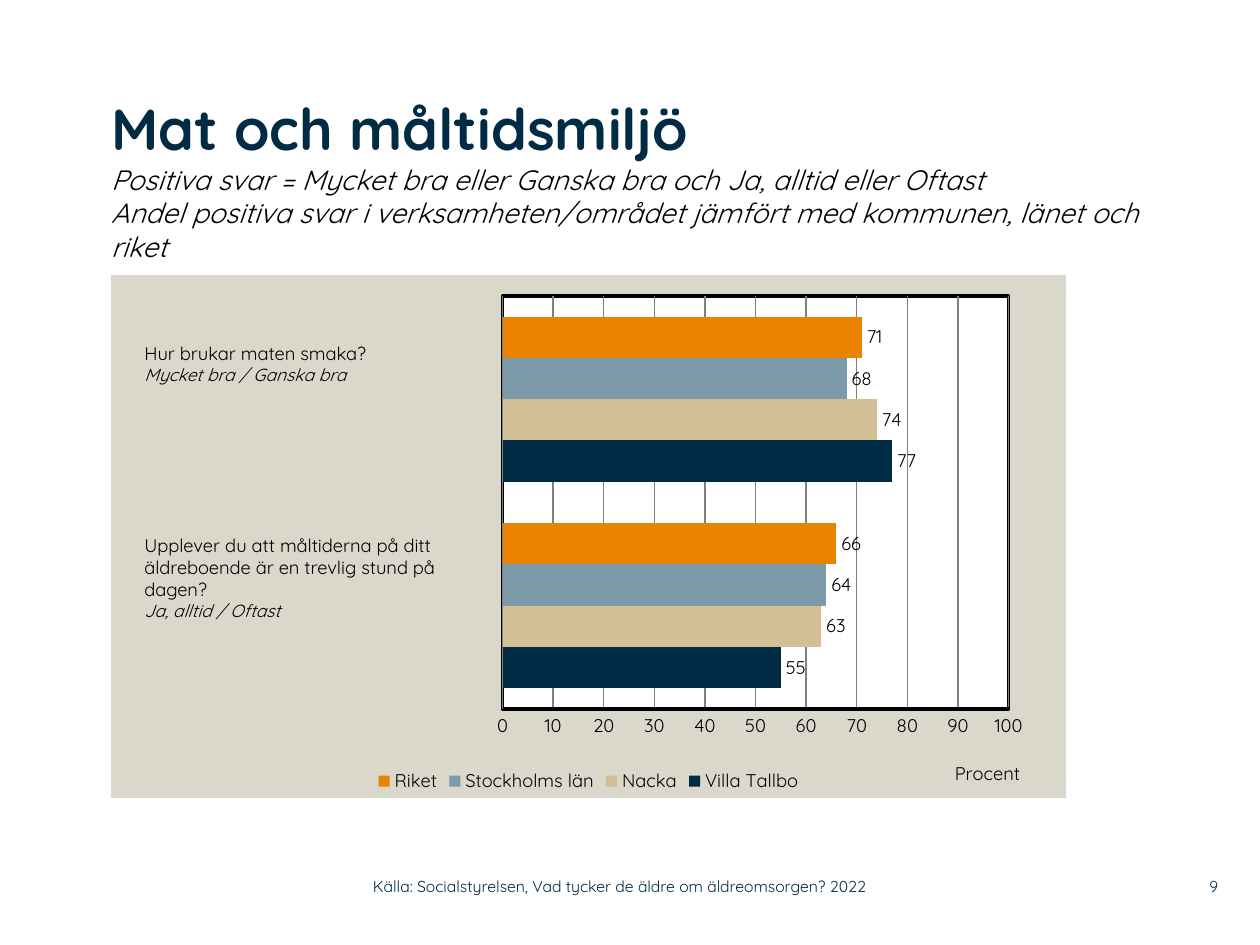
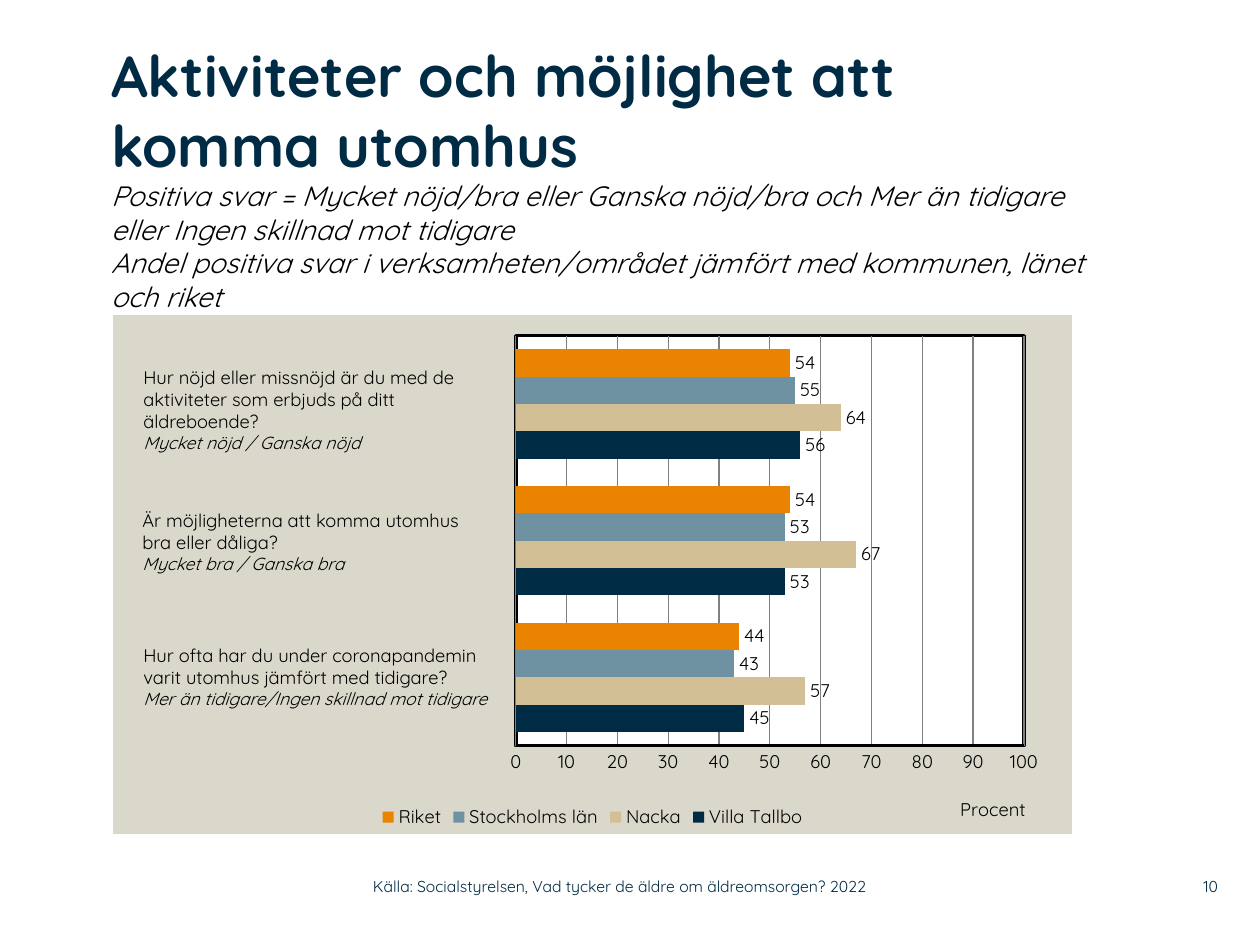
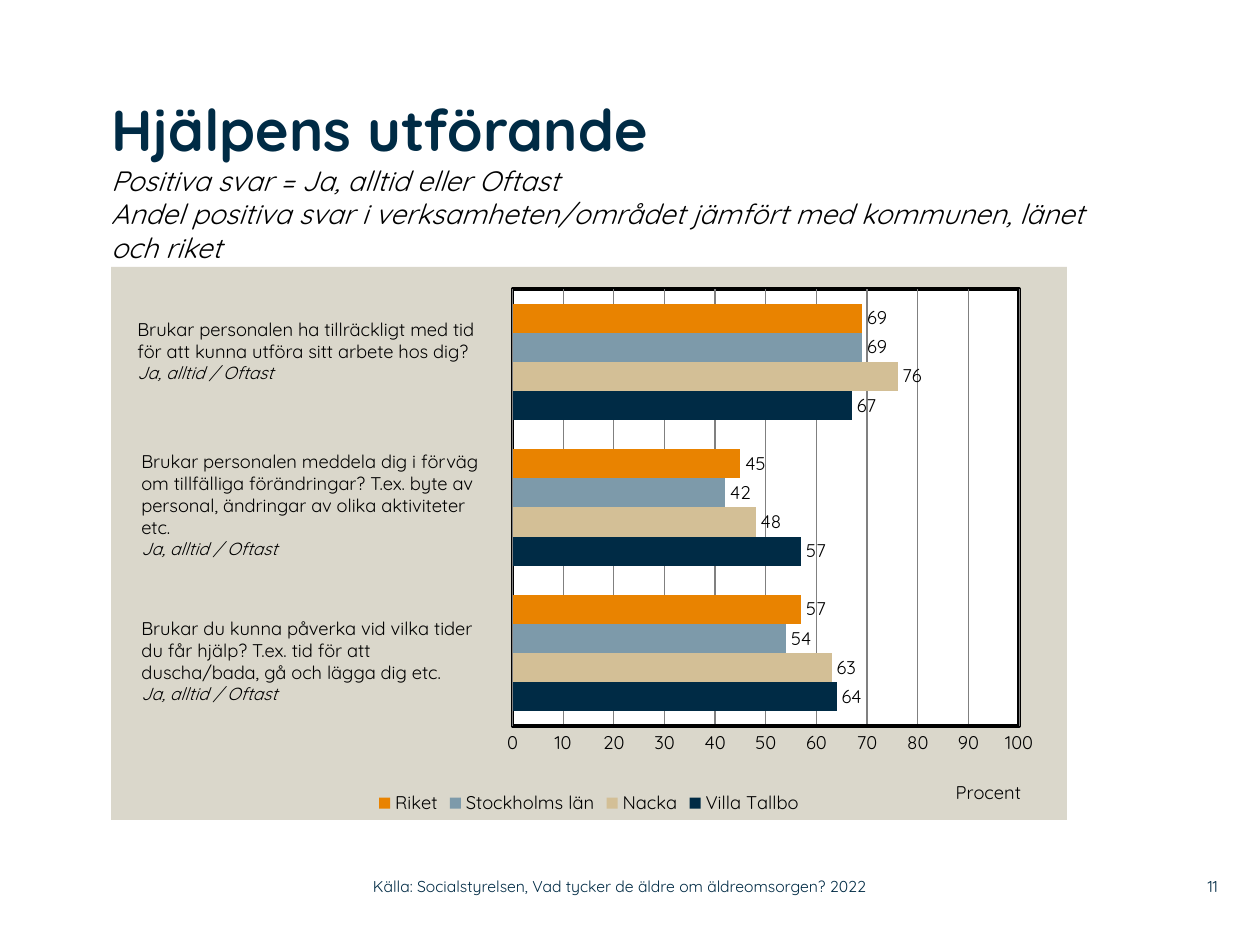
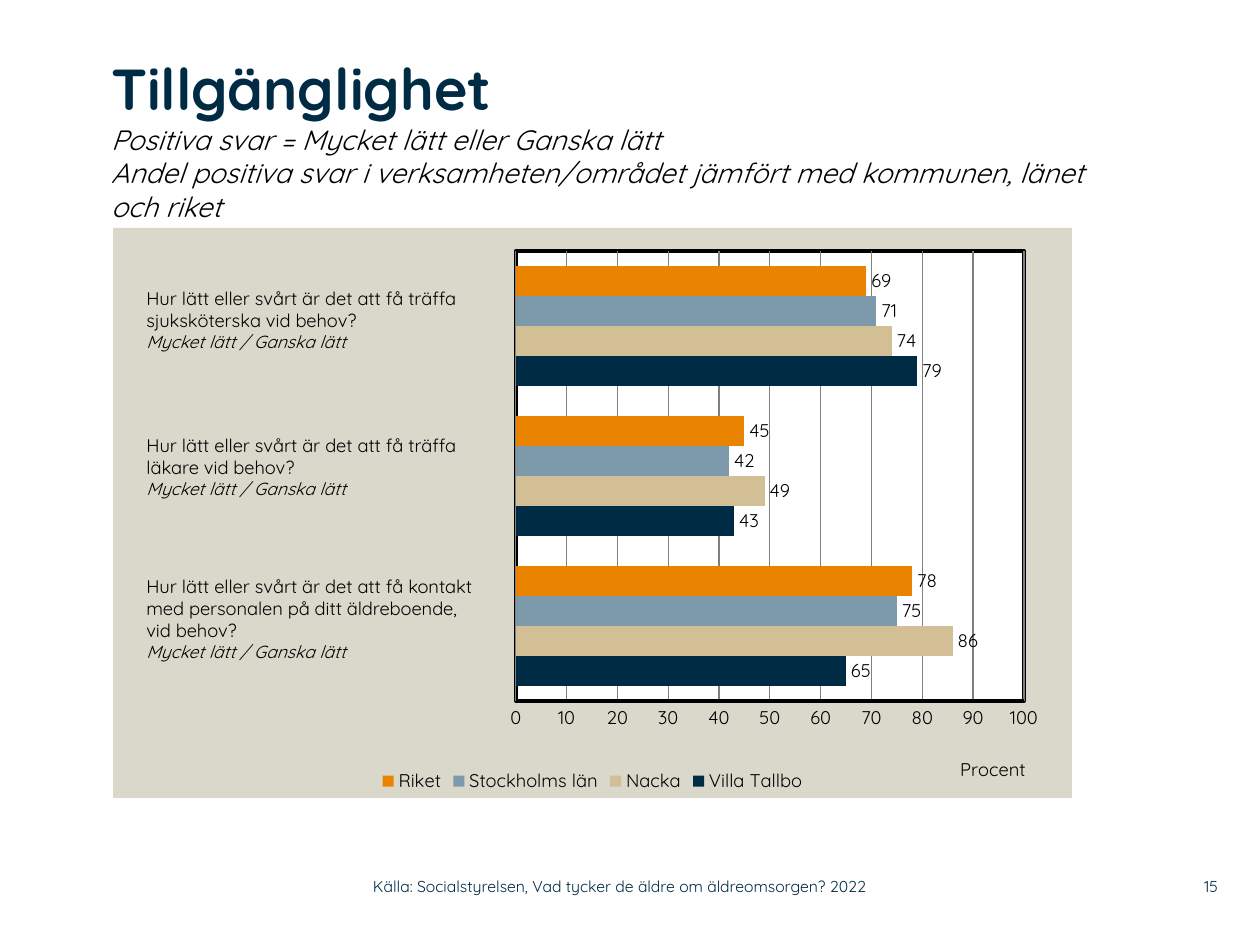
"""Build four slides with survey results from a home for elderly people."""
from lxml import etree
from pptx import Presentation
from pptx.chart.data import CategoryChartData
from pptx.dml.color import RGBColor
from pptx.enum.chart import XL_CHART_TYPE, XL_LABEL_POSITION, XL_LEGEND_POSITION, XL_TICK_MARK
from pptx.enum.text import MSO_ANCHOR, MSO_AUTO_SIZE, PP_ALIGN
from pptx.oxml import parse_xml
from pptx.oxml.ns import nsdecls, qn
from pptx.util import Emu, Pt

BARS = XL_CHART_TYPE.BAR_CLUSTERED
OUTSIDE_END = XL_LABEL_POSITION.OUTSIDE_END
BOTTOM = XL_LEGEND_POSITION.BOTTOM
NO_TICKS = XL_TICK_MARK.NONE
TOP, MIDDLE = MSO_ANCHOR.TOP, MSO_ANCHOR.MIDDLE
LEFT, RIGHT = PP_ALIGN.LEFT, PP_ALIGN.RIGHT
FIXED = MSO_AUTO_SIZE.NONE

EMU_PER_INCH, PX_PER_INCH = 914400, 126
TITLE_ONLY_LAYOUT = 5
FONT = "Quicksand"
NAVY, BLACK, WHITE = "002B45", "000000", "FFFFFF"
SAND, GREY = "DAD7CB", "808080"
STEEL, TEAL = "7D9AAA", "6F92A2"

HEADING = {"size": 33, "bold": True, "italic": False, "color": NAVY}
SUBTITLE = {"size": 16, "bold": False, "italic": True, "color": BLACK}
QUESTION = {"size": 10.5, "color": BLACK}
ANSWER = {"size": 10, "italic": True, "color": BLACK}
FOOTER = {"size": 9, "color": NAVY}
CHART_TEXT = {"size": 10.5, "bold": False, "color": BLACK}

SOURCE = "Källa: Socialstyrelsen, Vad tycker de äldre om äldreomsorgen? 2022"
COMPARISON = ("Andel positiva svar i verksamheten/området jämfört "
              "med kommunen, länet och riket")
SERIES_COLORS = {"Villa Tallbo": NAVY, "Nacka": "D3BF96",
                 "Stockholms län": STEEL, "Riket": "E98300"}
AXIS_TITLE_POSITION = {"x": 0.88, "y": 0.92}

SLIDES = [
    {
        "number": 9,
        "title": "Mat och måltidsmiljö",
        "title_at": (111, 93, 1061, 181),
        "positive": "Positiva svar = Mycket bra eller Ganska bra och Ja, alltid eller Oftast",
        "chart_at": (111, 275, 955, 523),
        "plot": (0.41, 0.04, 0.53, 0.79),
        "values": [(55, 77), (63, 74), (64, 68), (66, 71)],
        "questions": [
            ((132, 336, 349, 79), ["Hur brukar maten smaka?"], "Mycket bra / Ganska bra"),
            ((132, 528, 349, 123),
             ["Upplever du att måltiderna på ditt äldreboende är en trevlig stund på",
              "dagen?"], "Ja, alltid / Oftast"),
        ],
    },
    {
        "number": 10,
        "title": "Aktiviteter och möjlighet att komma utomhus",
        "title_at": (111, 40, 983, 238),
        "positive": "Positiva svar = Mycket nöjd/bra eller Ganska nöjd/bra och "
                    "Mer än tidigare eller Ingen skillnad mot tidigare",
        "chart_at": (113, 315, 959, 519),
        "plot": (0.42, 0.04, 0.53, 0.79),
        "region_color": TEAL,
        "values": [(45, 53, 56), (57, 67, 64), (43, 53, 55), (44, 54, 54)],
        "questions": [
            ((131, 360, 378, 123),
             ["Hur nöjd eller missnöjd är du med de aktiviteter som erbjuds på ditt "
              "äldreboende?"], "Mycket nöjd / Ganska nöjd"),
            ((130, 503, 379, 102),
             ["Är möjligheterna att komma utomhus", "bra eller dåliga?"],
             "Mycket bra / Ganska bra"),
            ((131, 638, 379, 100),
             ["Hur ofta har du under coronapandemin varit utomhus jämfört med tidigare?"],
             "Mer än tidigare/Ingen skillnad mot tidigare"),
        ],
    },
    {
        "number": 11,
        "title": "Hjälpens utförande",
        "title_at": (111, 94, 982, 152),
        "positive": "Positiva svar = Ja, alltid eller Oftast",
        "chart_at": (111, 267, 956, 553),
        "plot": (0.42, 0.04, 0.53, 0.79),
        "values": [(64, 57, 67), (63, 48, 76), (54, 42, 69), (57, 45, 69)],
        "questions": [
            ((125, 312, 374, 102),
             ["Brukar personalen ha tillräckligt med tid",
              "för att kunna utföra sitt arbete hos dig?"], "Ja, alltid / Oftast"),
            ((129, 444, 377, 123),
             ["Brukar personalen meddela dig i förväg om tillfälliga förändringar? "
              "T.ex. byte av personal, ändringar av olika aktiviteter etc."],
             "Ja, alltid / Oftast"),
            ((129, 611, 374, 102),
             ["Brukar du kunna påverka vid vilka tider", "du får hjälp? T.ex. tid för att",
              "duscha/bada, gå och lägga dig etc."], "Ja, alltid / Oftast"),
        ],
    },
    {
        "number": 15,
        "title": "Tillgänglighet",
        "title_at": (111, 53, 979, 175),
        "positive": "Positiva svar = Mycket lätt eller Ganska lätt",
        "chart_at": (113, 228, 959, 570),
        "plot": (0.42, 0.04, 0.53, 0.79),
        "values": [(65, 43, 79), (86, 49, 74), (75, 42, 71), (78, 45, 69)],
        "questions": [
            ((134, 281, 377, 102),
             ["Hur lätt eller svårt är det att få träffa sjuksköterska vid behov?"],
             "Mycket lätt / Ganska lätt"),
            ((134, 428, 369, 102),
             ["Hur lätt eller svårt är det att få träffa", "läkare vid behov?"],
             "Mycket lätt / Ganska lätt"),
            ((134, 569, 379, 123),
             ["Hur lätt eller svårt är det att få kontakt",
              "med personalen på ditt äldreboende,", "vid behov?"],
             "Mycket lätt / Ganska lätt"),
        ],
    },
]


def px(length):
    """Turn a length in px into EMU."""
    return Emu(round(length * EMU_PER_INCH / PX_PER_INCH))


def rgb(color):
    """Turn a hex string into a colour."""
    return RGBColor.from_string(color)


def format_font(font, style):
    """Apply a style dict to a font."""
    values = {"name": FONT, **style}
    font.color.rgb = rgb(values.pop("color"))
    values["size"] = Pt(values["size"])
    for name, value in values.items():
        setattr(font, name, value)


def add_span(para, text, style):
    """Add a formatted run to a paragraph."""
    span = para.add_run()
    span.text = text
    format_font(span.font, style)


def format_frame(frame, anchor=TOP, inset=True):
    """Set wrapping, anchor and margins of a text frame."""
    values = {"word_wrap": True, "auto_size": FIXED, "vertical_anchor": anchor}
    if not inset:
        sides = ("left", "right", "top", "bottom")
        values.update({f"margin_{side}": 0 for side in sides})
    for name, value in values.items():
        setattr(frame, name, value)


def add_text(page, area, lines, align=LEFT, **frame_values):
    """Add a text box with one paragraph for each (text, style) pair."""
    box = page.shapes.add_textbox(*map(px, area))
    frame = box.text_frame
    format_frame(frame, **frame_values)
    for index, (text, style) in enumerate(lines):
        para = frame.add_paragraph() if index else frame.paragraphs[0]
        para.alignment = align
        add_span(para, text, style)


def set_title(page, area, heading, subtitles):
    """Fill the title placeholder with a heading and its subtitle lines."""
    title = page.shapes.title
    for name, value in zip(("left", "top", "width", "height"), area):
        setattr(title, name, px(value))
    format_frame(title.text_frame, inset=False)
    para = title.text_frame.paragraphs[0]
    para.alignment = LEFT
    add_span(para, heading, HEADING)
    for text in subtitles:
        para.add_line_break()
        add_span(para, text, SUBTITLE)


def set_layout(parent, position, inner=False):
    """Give a chart part a manual position in fractions of the chart."""
    old = parent.find(qn("c:layout"))
    if old is not None:
        parent.remove(old)
    layout = etree.Element(qn("c:layout"))
    manual = etree.SubElement(layout, qn("c:manualLayout"))
    values = {"layoutTarget": "inner"} if inner else {}
    values.update({"xMode": "edge", "yMode": "edge", **position})
    for name, value in values.items():
        etree.SubElement(manual, qn(f"c:{name}")).set("val", str(value))
    parent.insert(0 if parent.find(qn("c:tx")) is None else 1, layout)


def area_format(fill, line=None):
    """Return shape properties for the area of a chart."""
    stroke = (f'<a:ln w="{Pt(2)}"><a:solidFill><a:srgbClr val="{line}"/></a:solidFill></a:ln>'
              if line else "<a:ln><a:noFill/></a:ln>")
    return parse_xml(f'<c:spPr {nsdecls("c", "a")}><a:solidFill><a:srgbClr val="{fill}"/>'
                     f'</a:solidFill>{stroke}</c:spPr>')


def format_value_axis(axis):
    """Show a percent scale with grey gridlines and a black axis line."""
    values = {"minimum_scale": 0, "maximum_scale": 100, "major_unit": 10,
              "major_tick_mark": NO_TICKS, "minor_tick_mark": NO_TICKS,
              "has_major_gridlines": True}
    for name, value in values.items():
        setattr(axis, name, value)
    for part, color, width in ((axis, BLACK, 2), (axis.major_gridlines, GREY, 0.75)):
        part.format.line.color.rgb = rgb(color)
        part.format.line.width = Pt(width)
    format_font(axis.tick_labels.font, CHART_TEXT)
    title = axis.axis_title
    add_span(title.text_frame.paragraphs[0], "Procent", CHART_TEXT)
    set_layout(title._element, AXIS_TITLE_POSITION)


def format_series(plot, colors):
    """Colour the bars and show their values."""
    plot.gap_width = 100
    plot.vary_by_categories = False
    for series in plot.series:
        series.format.fill.solid()
        series.format.fill.fore_color.rgb = rgb(colors[series.name])
        labels = series.data_labels
        labels.show_value = True
        labels.position = OUTSIDE_END
        format_font(labels.font, CHART_TEXT)


def add_bars(page, area, plot_area, values, colors):
    """Add the chart of answers by region."""
    data = CategoryChartData()
    data.categories = [str(index + 1) for index in range(len(values[0]))]
    for name, numbers in zip(colors, values):
        data.add_series(name, numbers)
    chart = page.shapes.add_chart(BARS, *map(px, area), data).chart
    chart.has_title = False
    format_font(chart.font, CHART_TEXT)
    chart.has_legend = True
    chart.legend.position = BOTTOM
    chart.legend.include_in_layout = False
    format_font(chart.legend.font, CHART_TEXT)
    chart.category_axis.visible = False
    format_value_axis(chart.value_axis)
    format_series(chart.plots[0], colors)
    body = chart._chartSpace.find(qn("c:chart"))
    body.addnext(area_format(SAND))
    plot = body.find(qn("c:plotArea"))
    plot.append(area_format(WHITE, BLACK))
    set_layout(plot, dict(zip("xywh", plot_area)), inner=True)


def add_footer(page, number):
    """Add the source line and the page number."""
    add_text(page, (373, 868, 558, 37), [(SOURCE, FOOTER)], anchor=MIDDLE, inset=False)
    add_text(page, (1159, 868, 59, 37), [(str(number), FOOTER)], RIGHT,
             anchor=MIDDLE, inset=False)


def add_result_page(deck, content):
    """Add one slide with title, chart, questions and footer."""
    page = deck.slides.add_slide(deck.slide_layouts[TITLE_ONLY_LAYOUT])
    set_title(page, content["title_at"], content["title"], [content["positive"], COMPARISON])
    colors = {**SERIES_COLORS, "Stockholms län": content.get("region_color", STEEL)}
    add_bars(page, content["chart_at"], content["plot"], content["values"], colors)
    for area, question, answer in content["questions"]:
        lines = [(text, QUESTION) for text in question]
        add_text(page, area, lines + [(answer, ANSWER)])
    add_footer(page, content["number"])


def main():
    """Build the deck and save it."""
    deck = Presentation()
    deck.slide_width, deck.slide_height = px(1260), px(945)
    for content in SLIDES:
        add_result_page(deck, content)
    deck.save("out.pptx")


if __name__ == "__main__":
    main()
